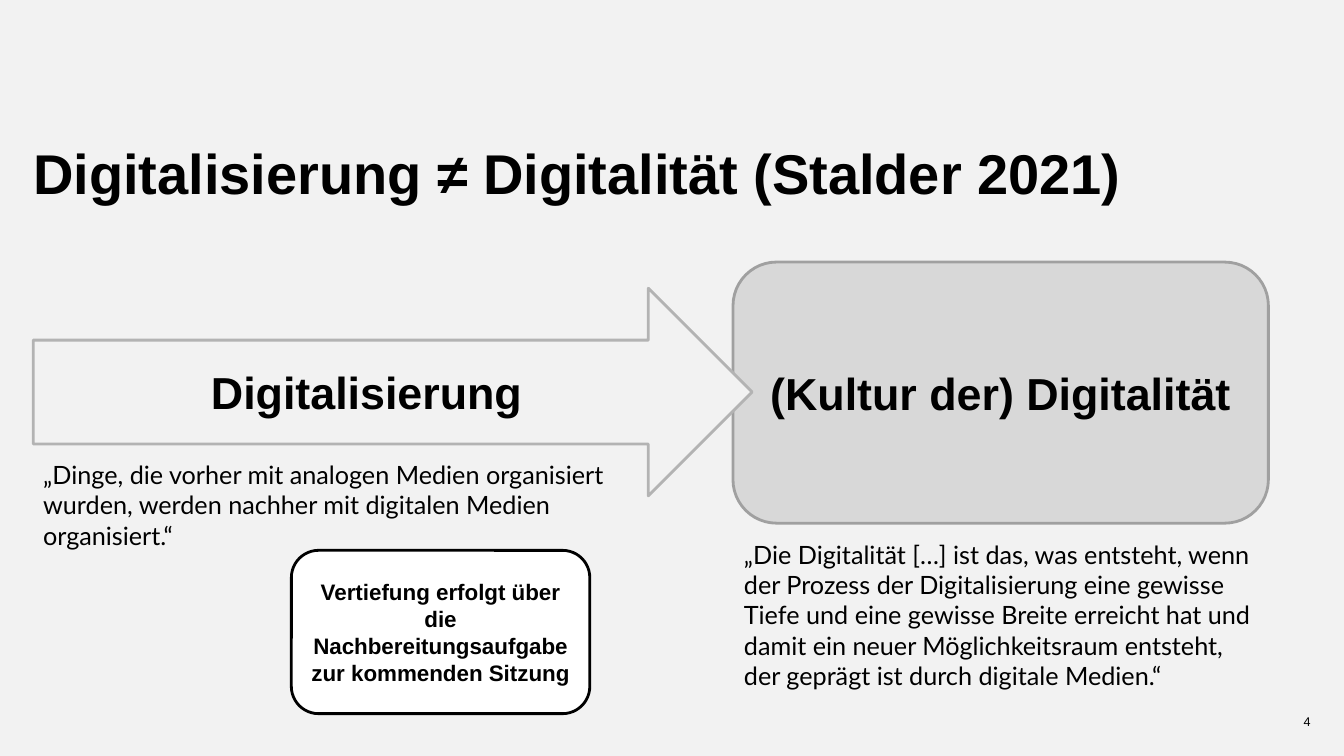
import pptx
import pptx.util
import pptx.dml.color
import pptx.enum.shapes
import pptx.enum.text
from dataclasses import dataclass

Inches = pptx.util.Inches
Shapes = pptx.enum.shapes.MSO_SHAPE
Align = pptx.enum.text.PP_ALIGN
Anchor = pptx.enum.text.MSO_ANCHOR


@dataclass(frozen=True)
class Theme:
    background: str = "F2F2F2"
    text: str = "000000"
    heading_font: str = "Arial"
    quote_font: str = "Lato"
    title_size: int = 40
    concept_size: int = 32
    quote_size: int = 18
    task_size: int = 16
    number_size: int = 9
    outline_width: int = 2


THEME = Theme()

TITLE = ("Digitalisierung ≠ Digitalität (Stalder 2021)", (0.33, 1.45, 12.68, 0.75))
PAGE_NUMBER = ("4", (12.61, 7.08, 0.39, 0.22))
QUOTES = [
    ("„Dinge, die vorher mit analogen Medien organisiert wurden, werden nachher "
     "mit digitalen Medien organisiert.“", (0.33, 4.51, 5.87, 1.01)),
    ("„Die Digitalität […] ist das, was entsteht, wenn der Prozess der Digitalisierung "
     "eine gewisse Tiefe und eine gewisse Breite erreicht hat und damit ein neuer "
     "Möglichkeitsraum entsteht, der geprägt ist durch digitale Medien.“",
     (7.28, 5.3, 5.31, 1.62)),
]
PANELS = [
    ("(Kultur der) Digitalität", Shapes.ROUNDED_RECTANGLE, (7.27, 2.6, 5.31, 2.59),
     "D8D8D8", "A0A0A0", THEME.concept_size),
    ("Digitalisierung", Shapes.RIGHT_ARROW, (0.33, 2.86, 7.13, 2.06),
     "F2F2F2", "B3B3B3", THEME.concept_size),
    ("Vertiefung erfolgt über die Nachbereitungsaufgabe zur kommenden Sitzung",
     Shapes.ROUNDED_RECTANGLE, (2.89, 5.46, 2.96, 1.62),
     "FFFFFF", "000000", THEME.task_size),
]


def color(value):
    return pptx.dml.color.RGBColor.from_string(value)


def lengths(box):
    return [Inches(value) for value in box]


def write(shape, text, size, font, bold=False, align=Align.LEFT, anchor=Anchor.TOP):
    frame = shape.text_frame
    frame.word_wrap = True
    frame.vertical_anchor = anchor
    paragraph = frame.paragraphs[0]
    paragraph.alignment = align
    run = paragraph.add_run()
    run.text = text
    run.font.size = pptx.util.Pt(size)
    run.font.name = font
    run.font.bold = bold
    run.font.color.rgb = color(THEME.text)
    return frame


def remove_margins(frame):
    frame.margin_left = frame.margin_top = frame.margin_right = frame.margin_bottom = 0


def add_title(slide):
    text, box = TITLE
    title = slide.shapes.title
    title.left, title.top, title.width, title.height = lengths(box)
    frame = write(title, text, THEME.title_size, THEME.heading_font, bold=True)
    frame.paragraphs[0].line_spacing = 0.9
    remove_margins(frame)


def add_page_number(slide):
    text, box = PAGE_NUMBER
    shape = slide.shapes.add_textbox(*lengths(box))
    remove_margins(write(shape, text, THEME.number_size, THEME.heading_font, align=Align.RIGHT))


def add_panel(slide, text, kind, box, fill, outline, size):
    shape = slide.shapes.add_shape(kind, *lengths(box))
    shape.shadow.inherit = False
    shape.fill.solid()
    shape.fill.fore_color.rgb = color(fill)
    shape.line.color.rgb = color(outline)
    shape.line.width = pptx.util.Pt(THEME.outline_width)
    write(shape, text, size, THEME.heading_font, True, Align.CENTER, Anchor.MIDDLE)


def add_quote(slide, text, box):
    shape = slide.shapes.add_textbox(*lengths(box))
    write(shape, text, THEME.quote_size, THEME.quote_font)


def main():
    presentation = pptx.Presentation()
    presentation.slide_width = Inches(13.33)
    presentation.slide_height = Inches(7.5)
    slide = presentation.slides.add_slide(presentation.slide_layouts[5])
    slide.background.fill.solid()
    slide.background.fill.fore_color.rgb = color(THEME.background)
    add_title(slide)
    add_page_number(slide)
    for panel in PANELS:
        add_panel(slide, *panel)
    for quote in QUOTES:
        add_quote(slide, *quote)
    presentation.save("out.pptx")


if __name__ == "__main__":
    main()
